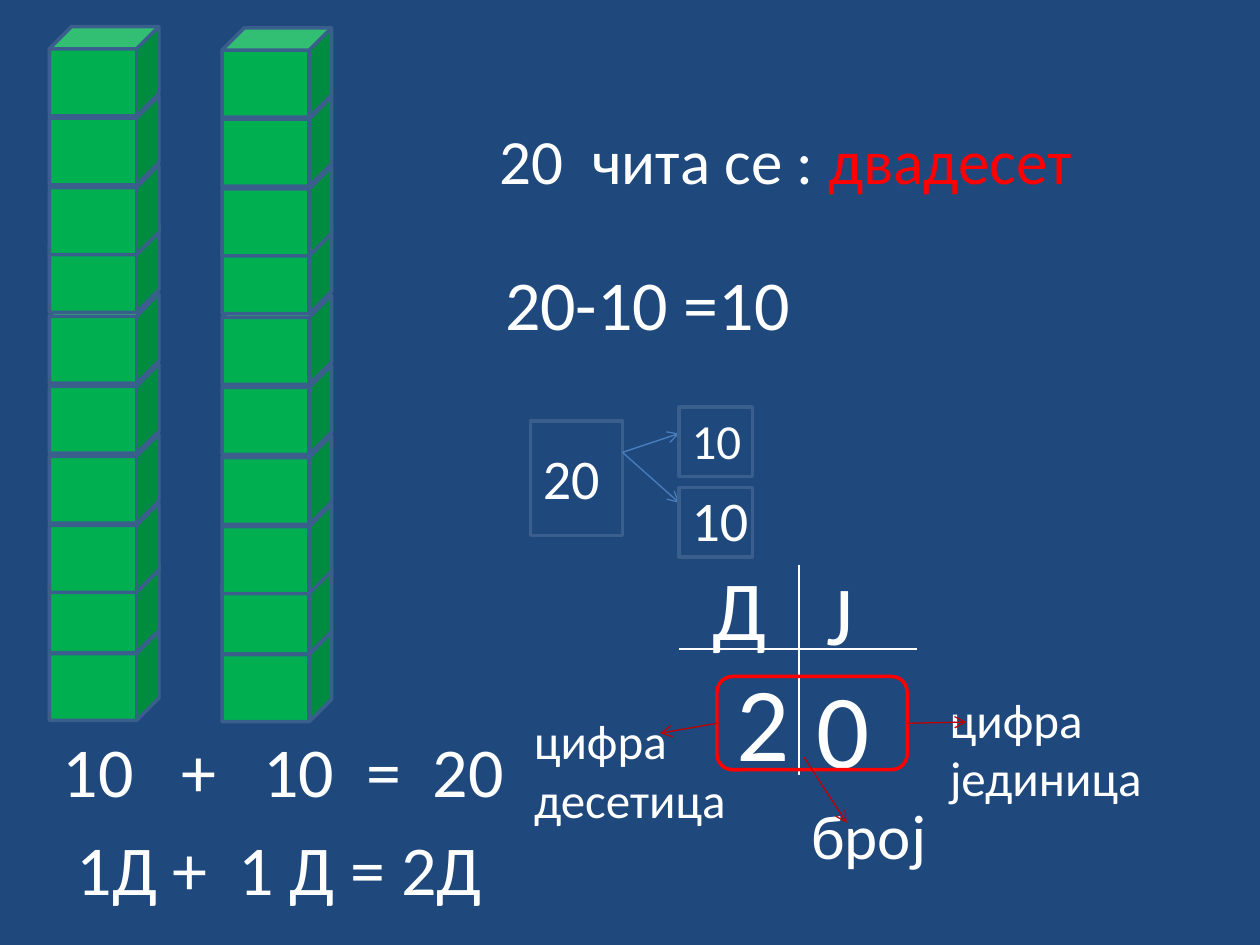
from dataclasses import dataclass

from lxml import etree
from pptx import Presentation
from pptx.dml.color import RGBColor
from pptx.enum.shapes import MSO_CONNECTOR, MSO_SHAPE
from pptx.enum.text import MSO_AUTO_SIZE
from pptx.oxml.ns import qn
from pptx.util import Pt

CUBE = MSO_SHAPE.CUBE
RECTANGLE = MSO_SHAPE.RECTANGLE
ROUNDED = MSO_SHAPE.ROUNDED_RECTANGLE
STRAIGHT = MSO_CONNECTOR.STRAIGHT
GROW = MSO_AUTO_SIZE.SHAPE_TO_FIT_TEXT


@dataclass(frozen=True)
class Theme:
    font: str = "Calibri"
    background: str = "1F497D"
    text: str = "FFFFFF"
    accent: str = "FF0000"
    cube: str = "00B050"
    outline: str = "3A5F8C"
    split_arrow: str = "4B7EBC"
    label_arrow: str = "C00000"
    outline_width: float = 2
    line_width: float = 0.75
    label: int = 28
    number: int = 32
    reading: int = 36
    equation: int = 40
    heading: int = 48
    digit: int = 60


THEME = Theme()


def color(value):
    return RGBColor.from_string(value)


def add_tab_stops(paragraph, positions):
    properties = paragraph._p.get_or_add_pPr()
    stops = etree.SubElement(properties, qn("a:tabLst"))
    for position in positions:
        etree.SubElement(stops, qn("a:tab"), pos=str(int(Pt(position))), algn="l")


class SlideBuilder:
    def __init__(self, slide, theme):
        self.slide = slide
        self.theme = theme
        background = slide.background.fill
        background.solid()
        background.fore_color.rgb = color(theme.background)

    def shape(self, kind, left, top, width, height, fill=None, line=None):
        shape = self.slide.shapes.add_shape(kind, Pt(left), Pt(top), Pt(width), Pt(height))
        shape.shadow.inherit = False
        if fill:
            shape.fill.solid()
            shape.fill.fore_color.rgb = color(fill)
        else:
            shape.fill.background()
        shape.line.color.rgb = color(line or self.theme.outline)
        shape.line.width = Pt(self.theme.outline_width)

    def text(self, left, top, width, *lines, size, wrap=False, indent=0, tabs=()):
        """Add one paragraph per line; a line is a string or a list of (text, color) runs."""
        height = len(lines) * size * 1.2 + 7.2
        box = self.slide.shapes.add_textbox(Pt(left), Pt(top), Pt(width), Pt(height))
        frame = box.text_frame
        frame.word_wrap = wrap
        frame.auto_size = GROW
        frame.margin_left = Pt(7.2 + indent)
        for index, line in enumerate(lines):
            paragraph = frame.paragraphs[0] if index == 0 else frame.add_paragraph()
            if tabs:
                add_tab_stops(paragraph, tabs)
            runs = [(line, self.theme.text)] if isinstance(line, str) else line
            for content, run_color in runs:
                run = paragraph.add_run()
                run.text = content
                run.font.name = self.theme.font
                run.font.size = Pt(size)
                run.font.color.rgb = color(run_color)

    def line(self, start, end, line_color, arrow=False):
        connector = self.slide.shapes.add_connector(STRAIGHT, *map(Pt, start + end))
        connector.line.color.rgb = color(line_color)
        connector.line.width = Pt(self.theme.line_width)
        if arrow:
            etree.SubElement(connector.line._get_or_add_ln(), qn("a:tailEnd"), type="arrow")
        etree.SubElement(connector._element.spPr, qn("a:effectLst"))


def add_cube_columns(builder):
    # From bottom to top, so each cube covers the top face of the one below.
    tops = (360.7, 322, 287.5, 248, 208, 168, 127.5, 94.5, 54.7, 15.2)
    for left, drop in ((28.2, 0), (126.9, 0.7)):
        for top in tops:
            builder.shape(CUBE, left, top + drop, 62.6, 51, fill=THEME.cube)


def add_equations(builder):
    builder.text(28.8, 412, 309, "10\t+\t10\t=\t20", size=THEME.equation, wrap=True,
                 tabs=(67.7, 114.7, 173.4, 211.4))
    builder.text(36.7, 468, 278, "1Д +\t1 Д = 2Д", size=THEME.equation, wrap=True,
                 tabs=(92.6,))
    builder.text(229.7, 66.2, 481.7,
                 [("20\tчита се : ", THEME.text), ("двадесет", THEME.accent)],
                 size=THEME.reading, wrap=True, indent=48.8, tabs=(52.8,))
    builder.text(281.5, 145.4, 178.6, "20-10 =10", size=THEME.equation)


def add_number_split(builder):
    builder.shape(RECTANGLE, 303.1, 240.5, 52.6, 65.5)
    builder.text(303.1, 249.8, 76.3, "20", size=THEME.number, wrap=True)
    parts = ((232.6, 231.1, 247.7, THEME.label), (278.6, 273.6, 287.3, THEME.number))
    for box_top, text_top, arrow_end, size in parts:
        builder.line((355.7, 258.5), (388.1, arrow_end), THEME.split_arrow, arrow=True)
        builder.shape(RECTANGLE, 388.1, box_top, 41.8, 39.6)
        builder.text(388.1, text_top, 1.02 * size + 14.4, "10", size=size)


def add_place_value_chart(builder):
    builder.line((388.1, 370.8), (524.2, 370.8), THEME.text)
    builder.line((456.5, 322.6), (456.5, 442.8), THEME.text)
    builder.text(400.3, 314.6, 45.4, "Д", size=THEME.heading)
    builder.text(465.1, 317.5, 54, "Ј", size=THEME.heading, wrap=True)
    builder.text(414, 371.5, 45.4, "2", size=THEME.digit)
    builder.text(459.4, 375.8, 38.2, "0", size=THEME.digit, wrap=True)
    builder.shape(ROUNDED, 409.7, 386.6, 108.7, 53.3, line=THEME.accent)

    builder.text(456.5, 451.4, 80.6, "број", size=THEME.reading)
    builder.text(535.7, 390.2, 125.3, "цифра", "јединица", size=THEME.label)
    builder.text(298.1, 402.5, 125.3, "цифра", "десетица", size=THEME.label)
    for start, end in (
        ((409.7, 413.3), (377.3, 419)),
        ((518.4, 413.3), (552.2, 412.6)),
        ((459.4, 432.7), (483.8, 470.2)),
    ):
        builder.line(start, end, THEME.label_arrow, arrow=True)


def main():
    presentation = Presentation()
    presentation.slide_width = Pt(720)
    presentation.slide_height = Pt(540)
    slide = presentation.slides.add_slide(presentation.slide_layouts[6])
    builder = SlideBuilder(slide, THEME)
    add_cube_columns(builder)
    add_equations(builder)
    add_number_split(builder)
    add_place_value_chart(builder)
    presentation.save("out.pptx")


if __name__ == "__main__":
    main()
